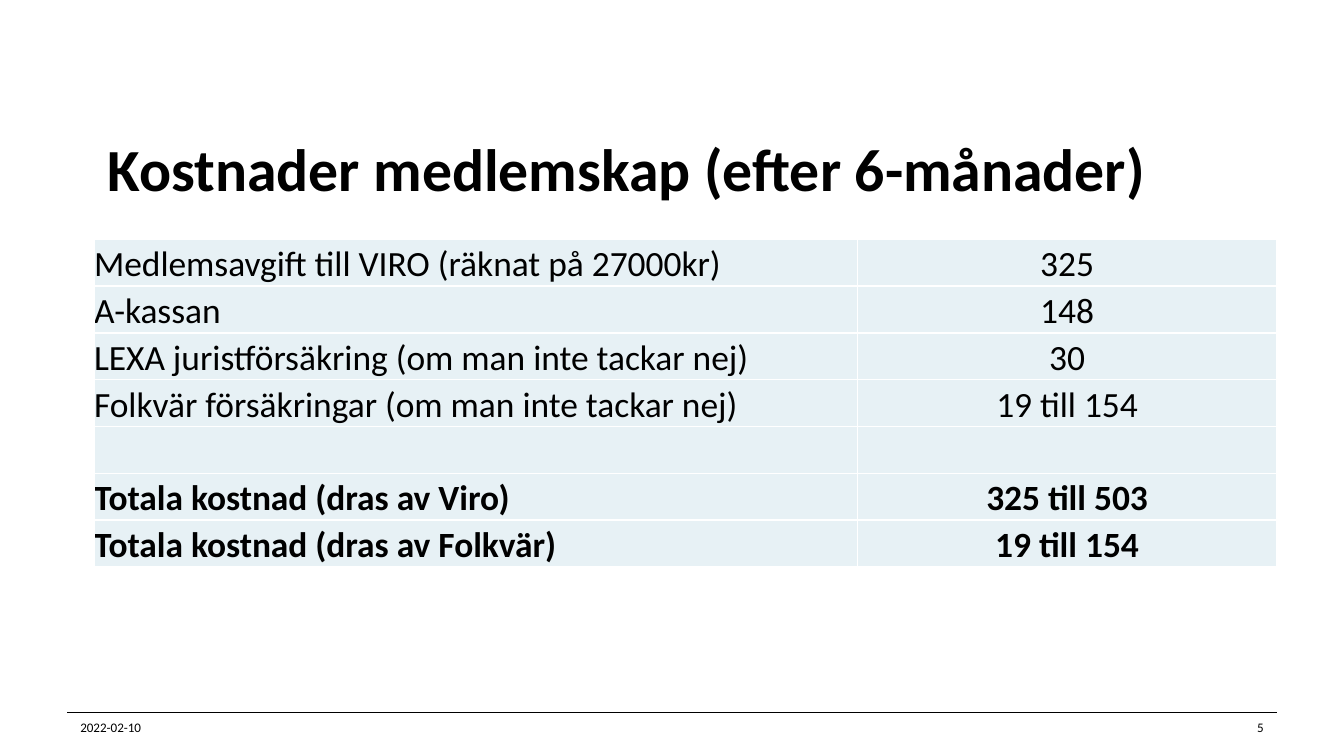
from pptx import Presentation
from pptx.dml.color import RGBColor
from pptx.enum.shapes import MSO_CONNECTOR as Connector
from pptx.enum.text import MSO_ANCHOR as Anchor, MSO_AUTO_SIZE as AutoSize, PP_ALIGN as Align
from pptx.oxml import parse_xml
from pptx.oxml.ns import nsdecls
from pptx.util import Inches, Pt


def color(value):
    return RGBColor.from_string(value)


def write(text_frame, text, size, bold=False, align=Align.LEFT, line_spacing=None):
    paragraph = text_frame.paragraphs[0]
    paragraph.alignment = align
    paragraph.line_spacing = line_spacing
    run = paragraph.add_run()
    run.text = text
    run.font.name = "Calibri"
    run.font.size = Pt(size)
    run.font.bold = bold
    run.font.color.rgb = color("000000")


# Widescreen, 16:9
presentation = Presentation()
presentation.slide_width = Inches(10)
presentation.slide_height = Inches(10) * 9 // 16
slide = presentation.slides.add_slide(presentation.slide_layouts[5])

# Footer rule
rule = slide.shapes.add_connector(
    Connector.STRAIGHT, Inches(0.5), Inches(5.3), Inches(9.5), Inches(5.3))
rule.line.color.rgb = color("000000")
rule.line.width = Pt(0.25)
rule._element.spPr.append(parse_xml(f"<a:effectLst {nsdecls('a')}/>"))

# Title
title = slide.shapes.title
title.left, title.top = Inches(0.7), Inches(0.82)
title.width, title.height = Inches(8.8), Inches(0.94)
title.text_frame.word_wrap = True
title.text_frame.auto_size = AutoSize.NONE
title.text_frame.vertical_anchor = Anchor.MIDDLE
write(title.text_frame, "Kostnader medlemskap (efter 6-månader)", size=32, bold=True,
      line_spacing=Pt(32))

# Date and slide number
for text, left, align in (("2022-02-10", 0.5, Align.LEFT), ("5", 8.54, Align.RIGHT)):
    footer = slide.shapes.add_textbox(Inches(left), Inches(5.3), Inches(0.96), Inches(0.22))
    footer.text_frame.word_wrap = True
    footer.text_frame.vertical_anchor = Anchor.MIDDLE
    write(footer.text_frame, text, size=7, align=align)

# Cost table: label, amount, bold
costs = [
    ("Medlemsavgift till VIRO (räknat på 27000kr)", "325", False),
    ("A-kassan", "148", False),
    ("LEXA juristförsäkring (om man inte tackar nej)", "30", False),
    ("Folkvär försäkringar (om man inte tackar nej)", "19 till 154", False),
    ("", "", False),
    ("Totala kostnad (dras av Viro)", "325 till 503", True),
    ("Totala kostnad (dras av Folkvär)", "19 till 154", True),
]
table_height = Inches(2.44)
table = slide.shapes.add_table(
    len(costs), 2, Inches(0.7), Inches(1.78), Inches(8.8), table_height).table
table.first_row = False
table.horz_banding = False
table.columns[0].width = Inches(5.68)
table.columns[1].width = Inches(3.12)

for row_index, (label, amount, bold) in enumerate(costs):
    table.rows[row_index].height = table_height // len(costs)
    for column_index, (text, align) in enumerate(((label, Align.LEFT), (amount, Align.CENTER))):
        cell = table.cell(row_index, column_index)
        cell.margin_left = cell.margin_right = cell.margin_top = cell.margin_bottom = 0
        cell.vertical_anchor = Anchor.BOTTOM
        if text:
            write(cell.text_frame, text, size=19, bold=bold, align=align)
        # Borders come before the fill in the cell properties
        for side in ("lnL", "lnR", "lnT", "lnB"):
            cell._tc.get_or_add_tcPr().append(parse_xml(
                f'<a:{side} {nsdecls("a")} w="12700"><a:solidFill>'
                f'<a:srgbClr val="FFFFFF"/></a:solidFill></a:{side}>'))
        cell.fill.solid()
        cell.fill.fore_color.rgb = color("E7F1F5")

presentation.save("out.pptx")
